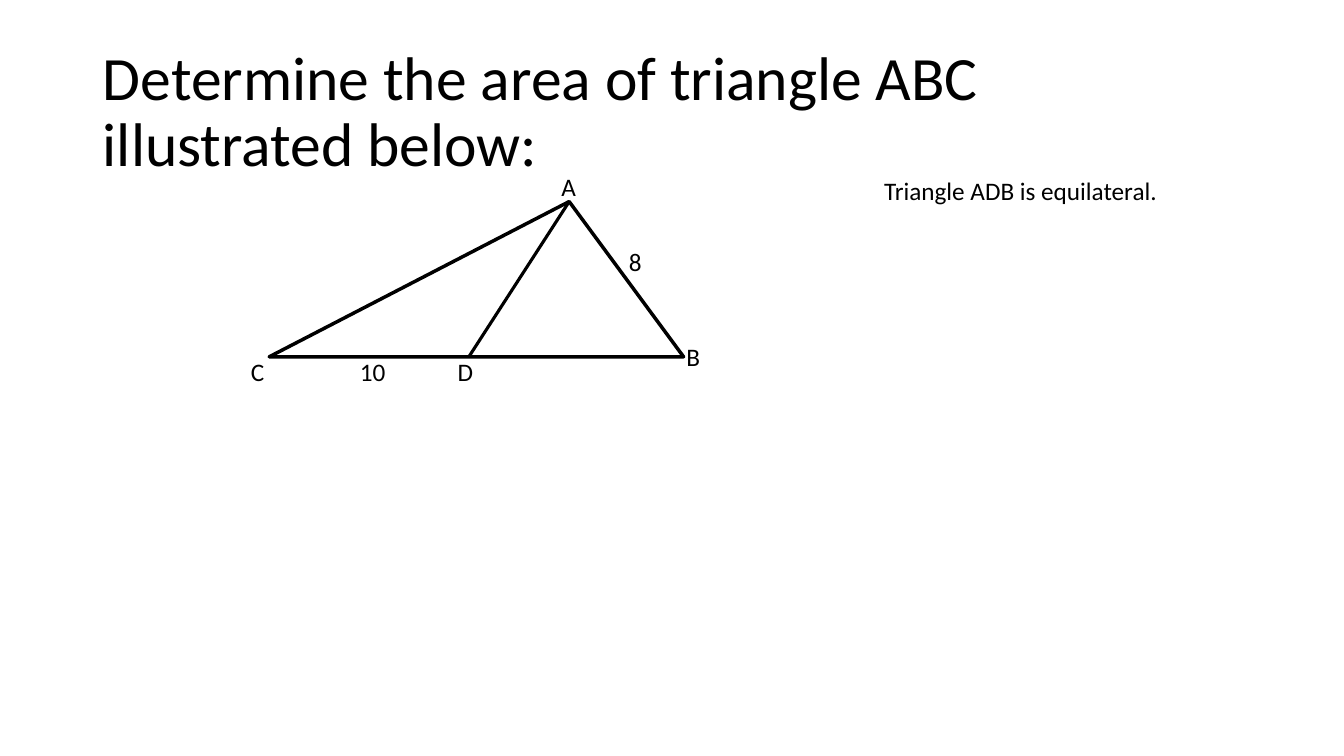
from lxml.etree import SubElement
from pptx import Presentation
from pptx.dml.color import RGBColor
from pptx.enum.shapes import MSO_CONNECTOR, MSO_SHAPE
from pptx.enum.text import MSO_ANCHOR, PP_ALIGN
from pptx.oxml.ns import qn
from pptx.util import Inches, Pt

# Content
TITLE = "Determine the area of triangle ABC illustrated below:"
NOTE = ("Triangle ADB is equilateral.", 8.67, 1.69, 3.65, 0.71)
LABEL_SIZE = (0.54, 0.4)
LABELS = [  # text, left, top
    ("A", 5.47, 1.65),
    ("B", 6.71, 3.34),
    ("C", 2.39, 3.49),
    ("D", 4.44, 3.49),
    ("8", 6.14, 2.39),
    ("10", 3.47, 3.49),
]
LEFT, TOP, WIDTH, HEIGHT = 2.67, 2, 4.11, 1.54
APEX = 0.724  # position of A along the base
D_X = 4.65
BLACK = "000000"


def color(hex_value):
    return RGBColor.from_string(hex_value)


def style_text(tf, size):
    tf.word_wrap = True
    for p in tf.paragraphs:
        p.alignment = PP_ALIGN.LEFT
        for r in p.runs:
            r.font.name = "Calibri"
            r.font.size = Pt(size)
            r.font.color.rgb = color(BLACK)


def add_label(s, text, *box):
    tf = s.shapes.add_textbox(*map(Inches, box)).text_frame
    tf.text = text
    style_text(tf, 18)


def style_line(line, width):
    line.color.rgb = color(BLACK)
    line.width = Pt(width)


prs = Presentation()
prs.slide_width, prs.slide_height = Inches(13.33), Inches(7.5)
s = prs.slides.add_slide(prs.slide_layouts[5])

# Title
title = s.shapes.title
title.left, title.top, title.width, title.height = map(Inches, (0.92, 0.4, 11.5, 1.45))
tf = title.text_frame
tf.text = TITLE
tf.vertical_anchor = MSO_ANCHOR.MIDDLE
tf.paragraphs[0].line_spacing = 0.9
style_text(tf, 44)

# Triangle ABC
triangle = s.shapes.add_shape(
    MSO_SHAPE.ISOSCELES_TRIANGLE, *map(Inches, (LEFT, TOP, WIDTH, HEIGHT)))
triangle.adjustments[0] = APEX
triangle.shadow.inherit = False
triangle.fill.background()
style_line(triangle.line, 2.5)

# Segment AD
segment = s.shapes.add_connector(
    MSO_CONNECTOR.STRAIGHT,
    *map(Inches, (LEFT + APEX * WIDTH, TOP, D_X, TOP + HEIGHT)))
style_line(segment.line, 2.25)
SubElement(segment._element.spPr, qn("a:effectLst"))

# Labels and note
for text, left, top in LABELS:
    add_label(s, text, left, top, *LABEL_SIZE)
add_label(s, *NOTE)

prs.save("out.pptx")
